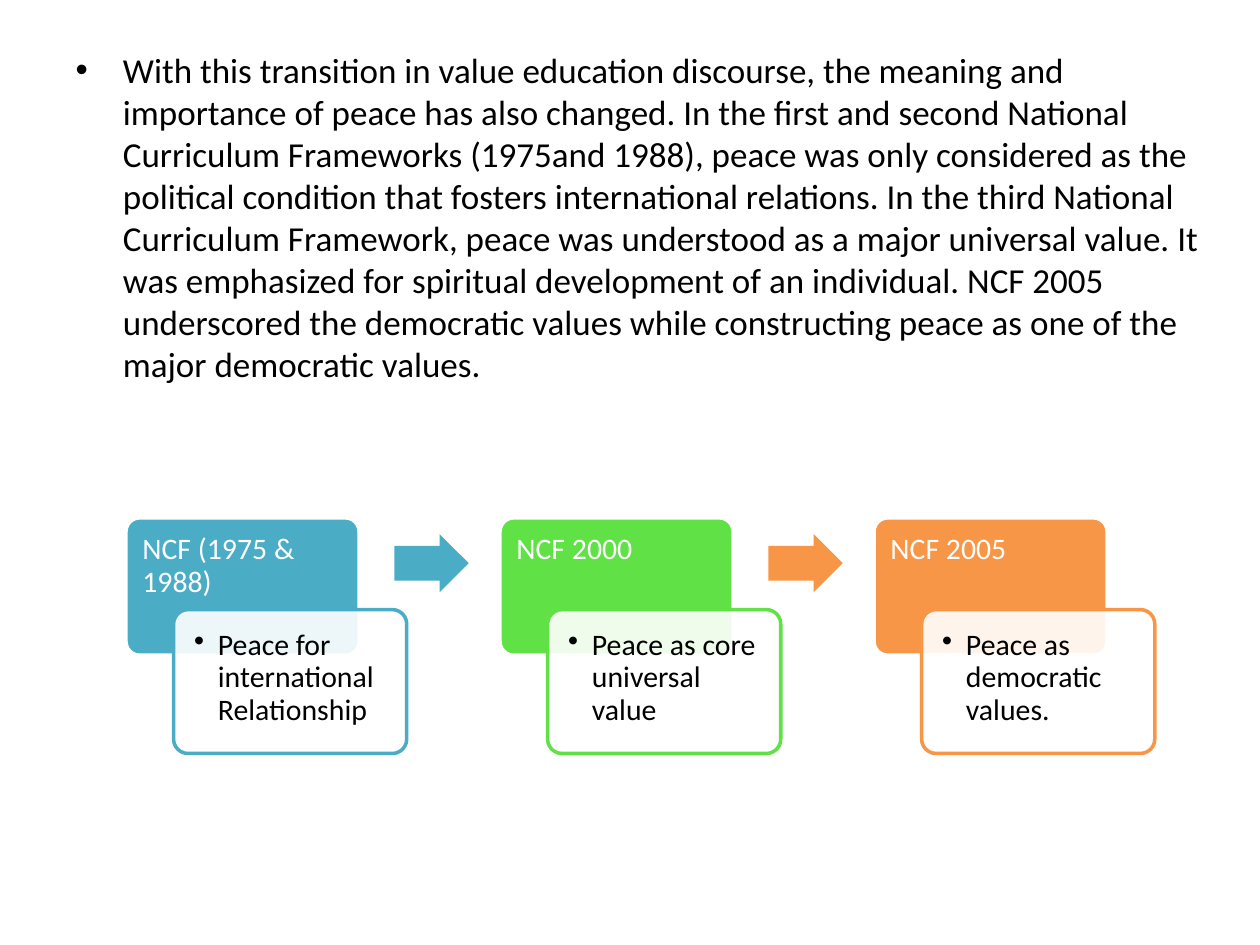
from lxml import etree
from pptx import Presentation
from pptx.dml.color import RGBColor
from pptx.enum import shapes, text
from pptx.oxml.ns import qn
from pptx.util import Cm, Pt

COLORS = {"teal": "4BACC6", "green": "60E146", "orange": "F79646",
          "white": "FFFFFF", "black": "000000"}
BODY = ("With this transition in value education discourse, the meaning and "
        "importance of peace has also changed. In the first and second National "
        "Curriculum Frameworks (1975and 1988), peace was only considered as the "
        "political condition that fosters international relations. In the third "
        "National Curriculum Framework, peace was understood as a major universal "
        "value. It was emphasized for spiritual development of an individual. "
        "NCF 2005 underscored the democratic values while constructing peace as "
        "one of the major democratic values.")
STAGES = [
    ("NCF (1975 & 1988)", "Peace for international Relationship", "teal"),
    ("NCF 2000", "Peace as core universal value", "green"),
    ("NCF 2005", "Peace as democratic values.", "orange"),
]
LEFT, TOP, PITCH = 2.54, 10.44, 7.54
BOX_W, HEAD_H, CARD_H = 4.7, 2.77, 2.9
CARD_DX, CARD_DY = 0.96, 1.85


def rgb(name):
    return RGBColor.from_string(COLORS[name])


def write(tf, content, size=17, color="black", spacing=None, bullet=False):
    tf.word_wrap = True
    tf.vertical_anchor = text.MSO_ANCHOR.TOP
    p = tf.paragraphs[0]
    p.alignment = text.PP_ALIGN.LEFT
    p.line_spacing = spacing
    r = p.add_run()
    r.text = content
    r.font.name = "Calibri"
    r.font.size = Pt(size)
    r.font.color.rgb = rgb(color)
    if bullet:
        pPr = p._p.get_or_add_pPr()
        pPr.set("marL", str(Cm(0.48)))
        pPr.set("indent", str(-Cm(0.48)))
        etree.SubElement(pPr, qn("a:buChar")).set("char", "•")


class FrameworkSlide:
    def __init__(self, prs):
        self.s = prs.slides.add_slide(prs.slide_layouts[1])
        title = self.s.shapes.title
        title.element.getparent().remove(title.element)

    def body(self, content):
        sp = self.s.placeholders[1]
        sp.left, sp.top, sp.width, sp.height = Cm(1.27), Cm(0.85), Cm(23.28), Cm(16.93)
        write(sp.text_frame, content, size=20)

    def shape(self, kind, x, y, w, h, fill, adjustments, line=None):
        sp = self.s.shapes.add_shape(kind, Cm(x), Cm(y), Cm(w), Cm(h))
        sp.shadow.inherit = False
        for i, value in enumerate(adjustments):
            sp.adjustments[i] = value
        sp.fill.solid()
        sp.fill.fore_color.rgb = rgb(fill)
        if line:
            sp.line.color.rgb = rgb(line)
            sp.line.width = Pt(2)
        else:
            sp.line.fill.background()
        return sp

    def box(self, x, y, h, fill, line, inset, content, **fmt):
        sp = self.shape(shapes.MSO_SHAPE.ROUNDED_RECTANGLE, x, y, BOX_W, h,
                        fill, [0.1], line)
        tf = sp.text_frame
        tf.margin_left = tf.margin_right = tf.margin_top = tf.margin_bottom = Cm(inset)
        write(tf, content, spacing=0.9, **fmt)
        return sp

    def stage(self, x, heading, meaning, color):
        self.box(x, TOP, HEAD_H, color, "white", 0.25, heading, color="white")
        card = self.box(x + CARD_DX, TOP + CARD_DY, CARD_H, "white", color, 0.33,
                        meaning, bullet=True)
        clr = card.fill._xPr.find(qn("a:solidFill"))[0]
        etree.SubElement(clr, qn("a:alpha")).set("val", "90000")

    def arrow(self, x, color):
        self.shape(shapes.MSO_SHAPE.RIGHT_ARROW, x, TOP + 0.33, 1.5, 1.17,
                   color, [0.6, 0.5])


def main():
    prs = Presentation()
    prs.slide_width, prs.slide_height = Cm(25.4), Cm(19.05)
    slide = FrameworkSlide(prs)
    slide.body(BODY)
    # Each arrow takes the colour of the stage before it, the last one that of the final stage
    arrow_colors = ["teal", "orange"]
    for i, (heading, meaning, color) in enumerate(STAGES):
        x = LEFT + i * PITCH
        slide.stage(x, heading, meaning, color)
        if i < len(arrow_colors):
            slide.arrow(x + 5.41, arrow_colors[i])
    prs.save("out.pptx")


if __name__ == "__main__":
    main()
